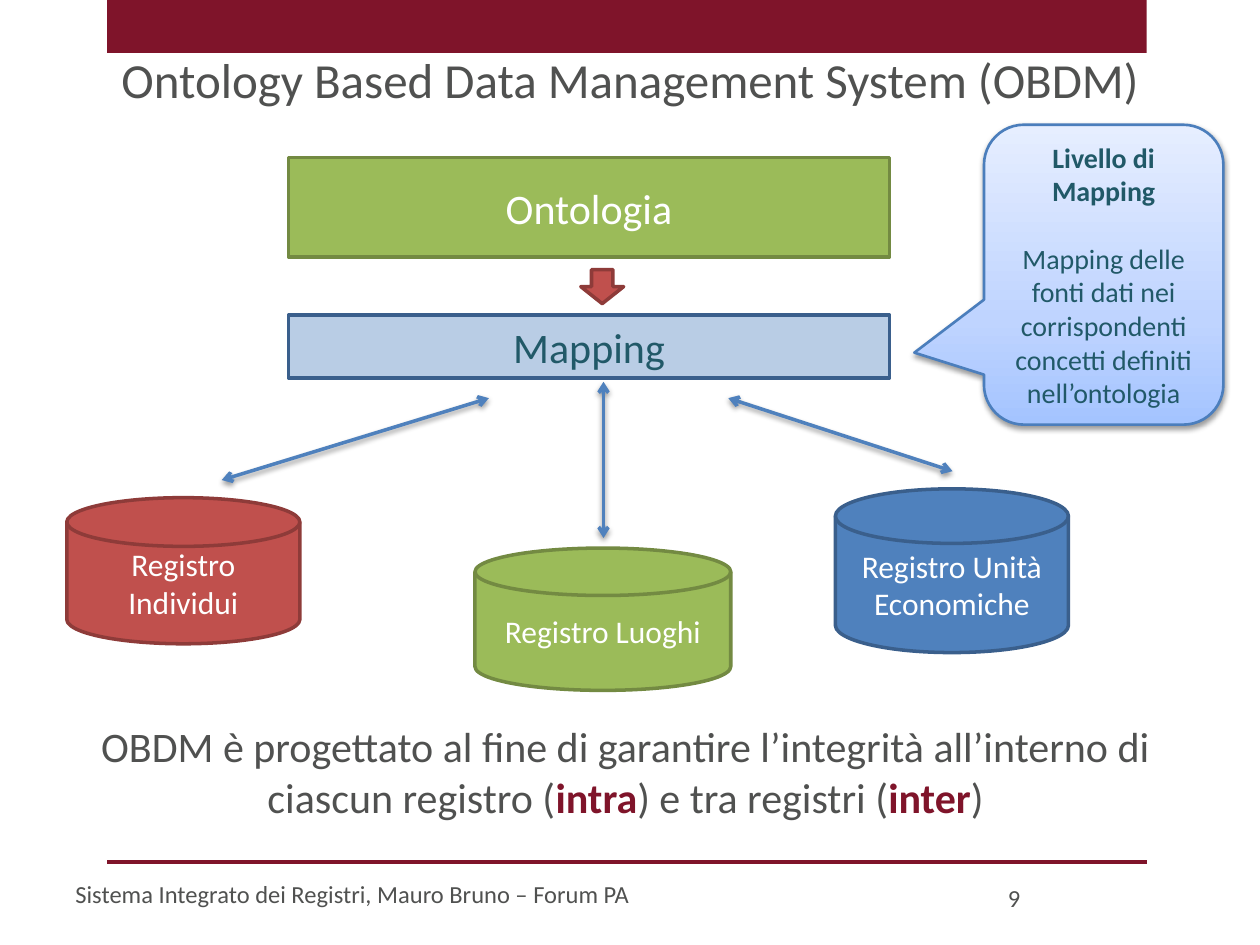
import pptx
import pptx.dml.color
import pptx.enum.shapes
import pptx.enum.text
import pptx.oxml
import pptx.oxml.ns
import pptx.util
from dataclasses import dataclass

Inches = pptx.util.Inches
Pt = pptx.util.Pt
SHAPE = pptx.enum.shapes.MSO_SHAPE
ALIGN = pptx.enum.text.PP_ALIGN
ANCHOR = pptx.enum.text.MSO_ANCHOR
NS = pptx.oxml.ns.nsdecls("a")


@dataclass(frozen=True)
class Theme:
    font: str = "Calibri"
    grey: str = "505150"
    wine: str = "7F142A"
    teal: str = "215968"
    white: str = "FFFFFF"
    red: tuple = ("C0504D", "8E3B39")
    green: tuple = ("9BBB59", "738A42")
    blue: tuple = ("4F81BD", "3A5F8C")
    pale: tuple = ("B9CDE5", "3A5F8C")
    callout_line: str = "4B7EBC"
    callout_stops: tuple = ((0, "A4C4FF"), (35, "BFD4FF"), (100, "E6EEFF"))
    title: int = 28
    large: int = 24
    medium: int = 18
    note: int = 16
    footer: int = 14


THEME = Theme()


def rgb(value):
    return pptx.dml.color.RGBColor.from_string(value)


def set_all(target, values):
    for name, value in values.items():
        setattr(target, name, value)


def add_span(para, text, size, color, bold=False):
    span = para.add_run()
    span.text = text
    set_all(span.font, {"name": THEME.font, "size": Pt(size), "bold": bold})
    span.font.color.rgb = rgb(color)


def add_text(page, box, spans, size, align=ALIGN.LEFT):
    frame = page.shapes.add_textbox(*map(Inches, box)).text_frame
    frame.word_wrap = True
    para = frame.paragraphs[0]
    para.alignment = align
    for text, color, bold in spans:
        add_span(para, text, size, color, bold)


def add_block(page, kind, box, colors, text="", size=THEME.medium, color=THEME.white):
    fill, line = colors
    shape = page.shapes.add_shape(kind, *map(Inches, box))
    shape.shadow.inherit = False
    shape.fill.solid()
    shape.fill.fore_color.rgb = rgb(fill)
    shape.line.color.rgb = rgb(line)
    shape.line.width = Pt(2)
    if text:
        frame = shape.text_frame
        set_all(frame, {"word_wrap": True, "vertical_anchor": ANCHOR.MIDDLE})
        frame.paragraphs[0].alignment = ALIGN.CENTER
        add_span(frame.paragraphs[0], text, size, color)
    return shape


def add_line(page, start, end, color):
    line = page.shapes.add_connector(
        pptx.enum.shapes.MSO_CONNECTOR.STRAIGHT, *map(Inches, start + end))
    line.line.color.rgb = rgb(color)
    line.line.width = Pt(2)
    line._element.spPr.append(pptx.oxml.parse_xml(f"<a:effectLst {NS}/>"))
    return line


def add_shadow(shape):
    effects = shape._element.spPr.find(pptx.oxml.ns.qn("a:effectLst"))
    effects.append(pptx.oxml.parse_xml(
        f'<a:outerShdw {NS} blurRad="{Pt(3.1)}" dist="{Pt(1.6)}" dir="5400000" '
        'rotWithShape="0"><a:srgbClr val="000000"><a:alpha val="38000"/>'
        '</a:srgbClr></a:outerShdw>'))


def add_double_arrow(page, start, end):
    arrow = add_line(page, start, end, THEME.blue[0])
    for tag in ("headEnd", "tailEnd"):
        arrow.line._get_or_add_ln().append(
            pptx.oxml.parse_xml(f'<a:{tag} {NS} type="arrow"/>'))
    add_shadow(arrow)


def draw_frame(page, box):
    """Top band, title, bottom rule and footer."""
    left, top, width, height = box
    band = add_block(page, SHAPE.RECTANGLE, (left, top, width, 0.42),
                     (THEME.wine, THEME.wine))
    band.line.fill.background()
    rule = top + height
    add_line(page, (left, rule), (left + width, rule), THEME.wine)
    add_text(page, (left - 0.35, top + 0.34, width + 0.75, 0.6),
             [("Ontology Based Data Management System (OBDM)", THEME.grey, False)],
             THEME.title, ALIGN.CENTER)
    add_text(page, (left - 0.35, rule + 0.09, 6.46, 0.4),
             [("Sistema Integrato dei Registri, Mauro Bruno – Forum PA",
               THEME.grey, False)], THEME.footer)
    add_text(page, (left + 7.05, rule + 0.12, 0.71, 0.4),
             [("9", THEME.grey, False)], THEME.footer)


def draw_layers(page, box):
    """Ontology above mapping, with a block arrow between."""
    left, top, width, height = box
    add_block(page, SHAPE.FLOWCHART_PROCESS, (left, top, width, 0.79),
              THEME.green, "Ontologia", THEME.large)
    add_block(page, SHAPE.RECTANGLE, (left, top + height - 0.5, width, 0.5),
              THEME.pale, "Mapping", THEME.large, THEME.teal)
    add_block(page, SHAPE.DOWN_ARROW, (left + 2.32, top + 0.89, 0.34, 0.27), THEME.red)


def draw_registers(page, box):
    """Three registers, each tied to the mapping by a double arrow."""
    left, top, _, _ = box
    registers = [
        ((0, 0.92, 1.85, 1.16), THEME.red, "Registro Individui",
         (3.35, 0.13), (1.23, 0.78)),
        ((6.1, 0.85, 1.85, 1.3), THEME.blue, "Registro Unità Economiche",
         (5.25, 0.13), (7.03, 0.71)),
        ((3.24, 1.32, 2.03, 1.13), THEME.green, "Registro Luoghi",
         (4.26, 0), (4.26, 1.24)),
    ]
    for (x, y, width, height), colors, text, start, end in registers:
        add_block(page, SHAPE.FLOWCHART_MAGNETIC_DISK,
                  (left + x, top + y, width, height), colors, text)
        add_double_arrow(page, (left + start[0], top + start[1]),
                         (left + end[0], top + end[1]))


def draw_callout(page, box):
    """Gradient callout that explains the mapping level."""
    callout = add_block(page, SHAPE.ROUNDED_RECTANGULAR_CALLOUT, box,
                        (THEME.white, THEME.callout_line), "Livello di Mapping",
                        THEME.note, THEME.teal)
    for index, value in enumerate((-0.791, 0.26, 0.167)):
        callout.adjustments[index] = value
    callout.line.width = Pt(1.5)
    add_shadow(callout)

    callout.fill.gradient()
    callout.fill.gradient_angle = 90
    stops = callout._element.spPr.find(".//" + pptx.oxml.ns.qn("a:gsLst"))
    for stop in list(stops):
        stops.remove(stop)
    for position, color in THEME.callout_stops:
        stops.append(pptx.oxml.parse_xml(
            f'<a:gs {NS} pos="{position * 1000}"><a:srgbClr val="{color}"/></a:gs>'))

    frame = callout.text_frame
    frame.paragraphs[0].runs[0].font.bold = True
    para = frame.add_paragraph()
    set_all(para, {"alignment": ALIGN.CENTER, "space_before": Pt(19.5)})
    add_span(para, "Mapping delle fonti dati nei corrispondenti concetti "
             "definiti nell’ontologia", THEME.note, THEME.teal)


def draw_summary(page, box):
    """Closing statement with two highlighted words."""
    add_text(page, box, [
        ("OBDM è progettato al fine di garantire l’integrità all’interno di "
         "ciascun registro (", THEME.grey, False),
        ("intra", THEME.wine, True),
        (") e tra registri (", THEME.grey, False),
        ("inter", THEME.wine, True),
        (")", THEME.grey, False),
    ], THEME.large, ALIGN.CENTER)


def main():
    deck = pptx.Presentation()
    set_all(deck, {"slide_width": Inches(10), "slide_height": Inches(7.5)})
    page = deck.slides.add_slide(deck.slide_layouts[6])
    draw_frame(page, (0.85, 0, 8.25, 6.84))
    draw_layers(page, (2.29, 1.25, 4.77, 1.75))
    draw_registers(page, (0.53, 3.03, 7.95, 2.45))
    draw_summary(page, (0.7, 5.67, 8.53, 0.91))
    draw_callout(page, (7.81, 0.99, 1.9, 2.38))
    deck.save("out.pptx")


if __name__ == "__main__":
    main()
